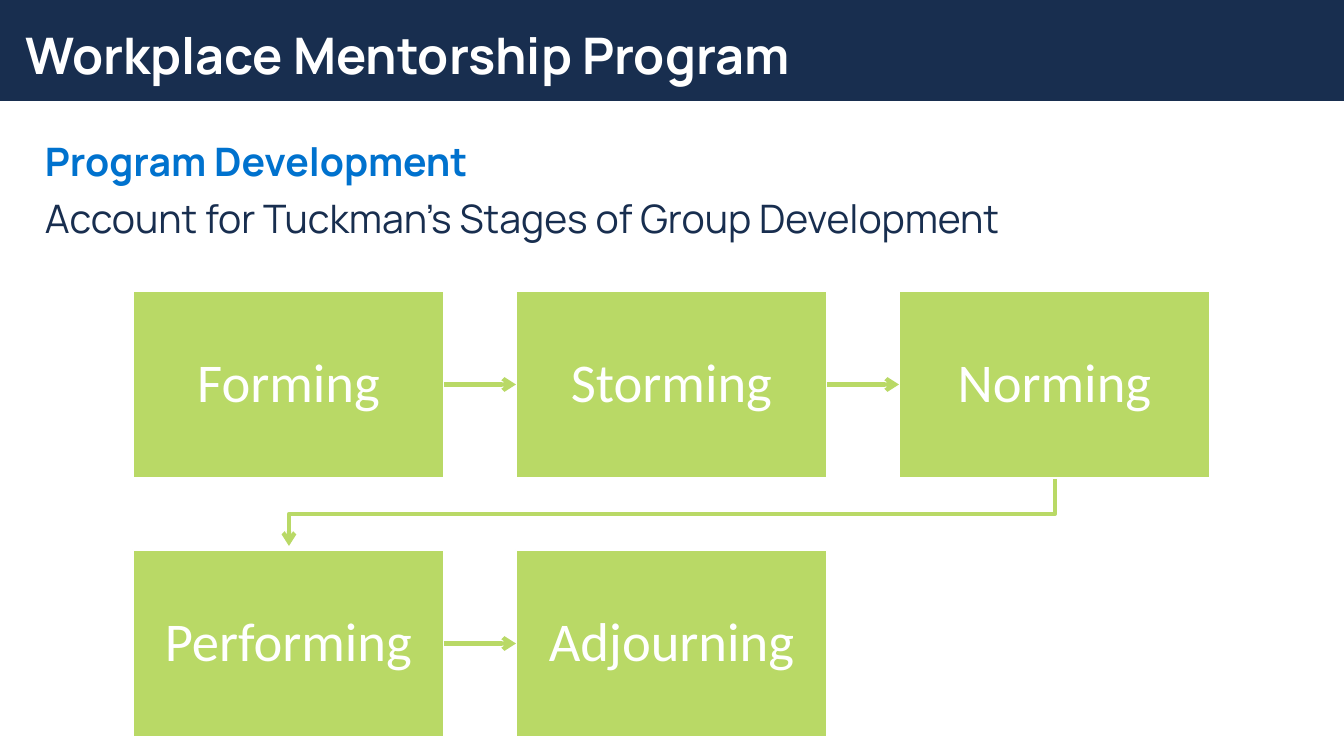
import pptx
import pptx.dml.color
import pptx.enum.shapes
import pptx.enum.text
import pptx.oxml
import pptx.oxml.ns
import pptx.util

PX = 914400 / 100.8
COLORS = {"navy": "182E4F", "blue": "0072CE", "green": "B9D966", "white": "FFFFFF"}
STAGES = ["Forming", "Storming", "Norming", "Performing", "Adjourning"]
COLUMNS = 3
STAGE_LEFT, STAGE_TOP = 133, 291
STAGE_WIDTH, STAGE_HEIGHT = 311, 187
COLUMN_STEP, ROW_STEP = 383, 259


def px(length):
    return pptx.util.Emu(round(length * PX))


def rgb(color):
    return pptx.dml.color.RGBColor.from_string(COLORS[color])


def write(paragraph, text, *, font, size, color, bold=False, align="LEFT", before=0):
    paragraph.alignment = pptx.enum.text.PP_ALIGN[align]
    paragraph.line_spacing = 0.9
    paragraph.space_before = pptx.util.Pt(before)
    run = paragraph.add_run()
    run.text = text
    run.font.name = font
    run.font.size = pptx.util.Pt(size)
    run.font.bold = bold
    run.font.color.rgb = rgb(color)


def add_block(slide, left, top, width, height, fill, outline=None):
    block = slide.shapes.add_shape(
        pptx.enum.shapes.MSO_SHAPE.RECTANGLE, px(left), px(top), px(width), px(height))
    block.shadow.inherit = False
    block.fill.solid()
    block.fill.fore_color.rgb = rgb(fill)
    if outline:
        block.line.color.rgb = rgb(outline)
        block.line.width = pptx.util.Pt(1)
    else:
        block.line.fill.background()
    return block


def add_text_frame(slide, left, top, width, height, anchor):
    frame = slide.shapes.add_textbox(px(left), px(top), px(width), px(height)).text_frame
    frame.word_wrap = True
    frame.vertical_anchor = pptx.enum.text.MSO_ANCHOR[anchor]
    return frame


def add_stage(slide, index, name):
    row, column = divmod(index, COLUMNS)
    stage = add_block(slide, STAGE_LEFT + column * COLUMN_STEP, STAGE_TOP + row * ROW_STEP,
                      STAGE_WIDTH, STAGE_HEIGHT, "green", "white")
    frame = stage.text_frame
    frame.word_wrap = True
    frame.vertical_anchor = pptx.enum.text.MSO_ANCHOR.MIDDLE
    frame.margin_left = frame.margin_right = frame.margin_top = frame.margin_bottom = px(30)
    write(frame.paragraphs[0], name, font="Calibri", size=39, color="white", align="CENTER")
    return stage


def style_arrow(arrow):
    arrow.line.color.rgb = rgb("green")
    arrow.line.width = pptx.util.Pt(3)
    head = pptx.oxml.parse_xml(
        f'<a:tailEnd {pptx.oxml.ns.nsdecls("a")} type="arrow"/>')
    arrow.line._get_or_add_ln().append(head)


def add_step_arrow(slide, before, after):
    arrow = slide.shapes.add_connector(pptx.enum.shapes.MSO_CONNECTOR.STRAIGHT, 0, 0, 0, 0)
    arrow.begin_connect(before, 3)
    arrow.end_connect(after, 1)
    style_arrow(arrow)
    arrow._element.spPr.append(
        pptx.oxml.parse_xml(f'<a:effectLst {pptx.oxml.ns.nsdecls("a")}/>'))


def add_row_arrow(slide):
    end_x = STAGE_LEFT + STAGE_WIDTH // 2 + 1
    start_x = end_x + (COLUMNS - 1) * COLUMN_STEP
    start_y = STAGE_TOP + STAGE_HEIGHT + 1
    turn_y = start_y + 35
    end_y = STAGE_TOP + ROW_STEP - 4
    outline = slide.shapes.build_freeform(start_x, start_y, scale=PX)
    outline.add_line_segments(
        [(start_x, turn_y), (end_x, turn_y), (end_x, end_y)], close=False)
    arrow = outline.convert_to_shape()
    arrow.shadow.inherit = False
    arrow.fill.background()
    style_arrow(arrow)


def main():
    deck = pptx.Presentation()
    deck.slide_width, deck.slide_height = px(1344), px(756)
    slide = deck.slides.add_slide(deck.slide_layouts[6])

    add_block(slide, 0, 0, 1344, 101, "navy")
    title = add_text_frame(slide, 16, 15, 1159, 86, "MIDDLE")
    write(title.paragraphs[0], "Workplace Mentorship Program",
          font="Manrope", size=36, color="white", bold=True)

    intro = add_text_frame(slide, 35, 138, 1159, 120, "TOP")
    write(intro.paragraphs[0], "Program Development",
          font="Manrope", size=28, color="blue", bold=True)
    write(intro.add_paragraph(), "Account for Tuckman’s Stages of Group Development",
          font="Manrope", size=28, color="navy", before=10)

    stages = [add_stage(slide, index, name) for index, name in enumerate(STAGES)]
    for index in range(1, len(stages)):
        if index % COLUMNS:
            add_step_arrow(slide, stages[index - 1], stages[index])
        else:
            add_row_arrow(slide)

    deck.save("out.pptx")


if __name__ == "__main__":
    main()
